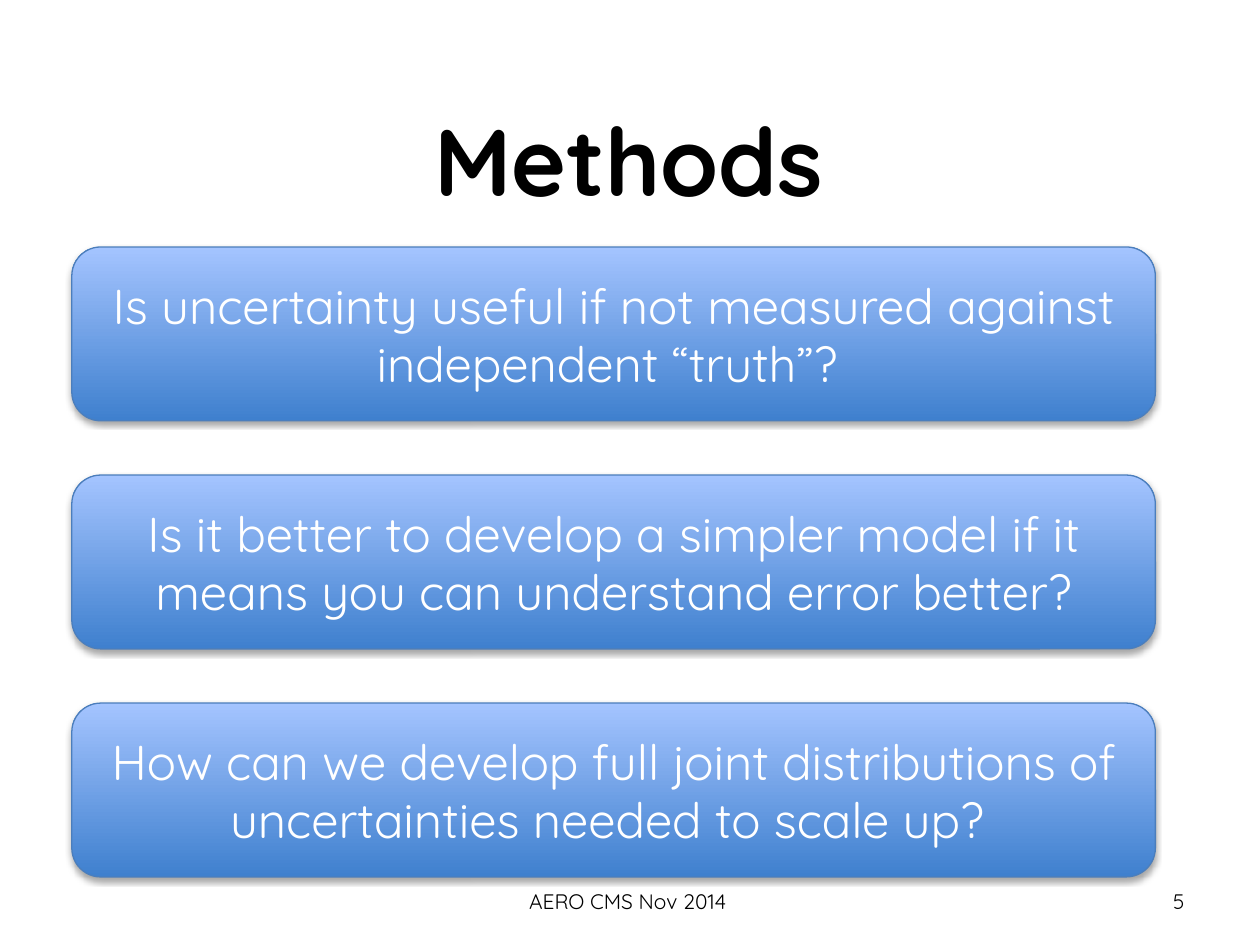
from lxml import etree
from pptx import Presentation
from pptx.dml.color import RGBColor
from pptx.enum.shapes import MSO_SHAPE
from pptx.enum.text import MSO_ANCHOR, PP_ALIGN
from pptx.oxml import parse_xml
from pptx.oxml.ns import nsdecls, qn
from pptx.util import Inches, Pt

BLACK = RGBColor(0x00, 0x00, 0x00)
WHITE = RGBColor(0xFF, 0xFF, 0xFF)
DARK = RGBColor(0x3F, 0x80, 0xCE)
LIGHT = RGBColor(0xA4, 0xC4, 0xFF)
EDGE = RGBColor(0x4B, 0x7E, 0xBC)
ROUND = MSO_SHAPE.ROUNDED_RECTANGLE
MIDDLE, TOP = MSO_ANCHOR.MIDDLE, MSO_ANCHOR.TOP
CENTER, RIGHT = PP_ALIGN.CENTER, PP_ALIGN.RIGHT
FONT = "Quicksand"


def write(shape, text, size, color, align=CENTER, anchor=MIDDLE, bold=False):
    frame = shape.text_frame
    frame.word_wrap = True
    frame.vertical_anchor = anchor
    frame.text = text
    para = frame.paragraphs[0]
    para.alignment = align
    font = para.runs[0].font
    font.name, font.size, font.bold = FONT, Pt(size), bold
    font.color.rgb = color


def add_shadow(shape):
    shape.shadow.inherit = False
    effects = shape._element.spPr.find(qn("a:effectLst"))
    effects.append(parse_xml(
        f'<a:outerShdw {nsdecls("a")} blurRad="{Pt(3.1)}" dist="{Pt(1.8)}" '
        'dir="5400000" rotWithShape="0"><a:srgbClr val="000000">'
        '<a:alpha val="35000"/></a:srgbClr></a:outerShdw>'))


prs = Presentation()
prs.slide_width, prs.slide_height = Inches(10), Inches(7.5)
slide = prs.slides.add_slide(prs.slide_layouts[6])
shapes = slide.shapes

# Footer and page number
footer = shapes.add_textbox(Inches(3.42), Inches(6.95), Inches(3.17), Inches(0.4))
write(footer, "AERO CMS Nov 2014 ", 12, BLACK)
page = shapes.add_textbox(Inches(7.17), Inches(6.95), Inches(2.33), Inches(0.4))
write(page, "5", 12, BLACK, align=RIGHT)

# Title
title = shapes.add_textbox(Inches(0.81), Inches(0.76), Inches(8.36), Inches(1.01))
write(title, "Methods", 54, BLACK, anchor=TOP, bold=True)

# Question boxes, evenly spaced
questions = [
    "Is uncertainty useful if not measured against independent “truth”? ",
    "Is it better to develop a simpler model if it means you can understand error better?",
    "How can we develop full joint distributions of uncertainties needed to scale up? ",
]
for row, question in enumerate(questions):
    box = shapes.add_shape(ROUND, Inches(0.57), Inches(1.96 + 1.81 * row),
                           Inches(8.6), Inches(1.38))
    box.fill.gradient()
    box.fill.gradient_angle = 90
    for stop, color, place in zip(box.fill.gradient_stops, (DARK, LIGHT), (0, 1)):
        stop.color.rgb = color
        stop.position = place
    box.line.color.rgb = EDGE
    box.line.width = Pt(0.75)
    add_shadow(box)
    write(box, question, 28, WHITE)

prs.save("out.pptx")
